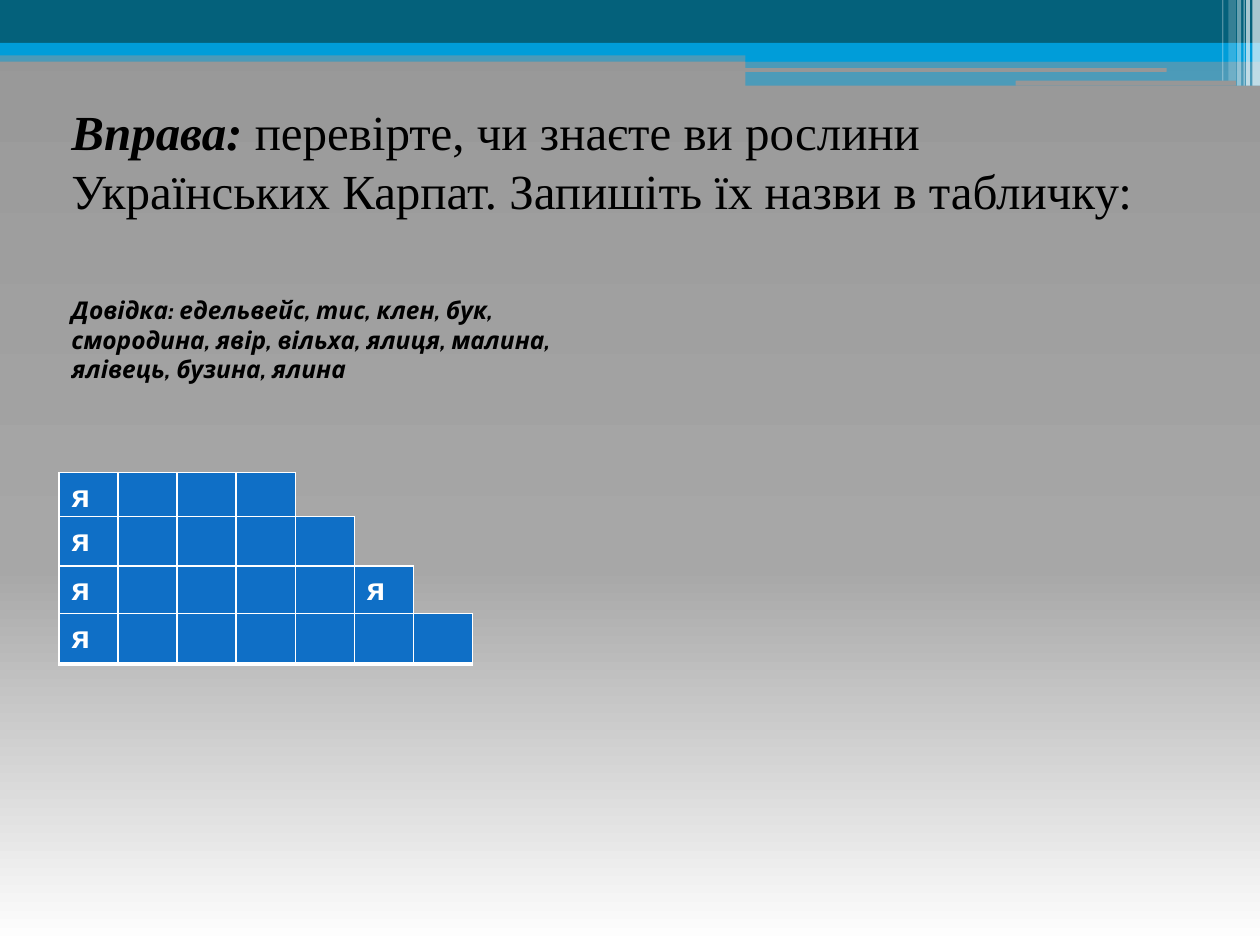
"""Build a slide with a plant-name exercise and a stepped letter grid."""
import pptx
import pptx.dml.color
import pptx.enum.shapes
import pptx.enum.text
import pptx.oxml
import pptx.oxml.ns
import pptx.util

Pt = pptx.util.Pt
qn = pptx.oxml.ns.qn
SHAPE = pptx.enum.shapes.MSO_SHAPE
NS = 'xmlns:a="http://schemas.openxmlformats.org/drawingml/2006/main"'

COLORS = {
    "teal": "04617B", "sky": "009DD9", "white": "FFFFFF", "black": "000000",
    "cell": "0F6FC6", "grey": "979797", "mid": "A7A7A7",
}
BACKDROP = [(0, "grey"), (60, "mid"), (100, "white")]

# left, top, width, height, color, opacity in percent
BARS = [
    (0, 28.8, 720, 6.5, "sky", 50),
    (0, 0, 720, 24.5, "teal", 100),
    (0, 24.5, 720, 7.2, "sky", 100),
    (426, 28, 294, 7.2, "sky", 100),
    (426, 34.6, 294, 14.4, "sky", 50),
]
SLOTS = [(425.5, 38.9, 241.2, 2.2), (580.3, 46.1, 126, 2.9)]
# left, width, height, opacity in percent
STRIPES = [
    (715.7, 4.3, 49, 65), (712.1, 2.2, 49, 65), (710.6, 0.7, 49, 60),
    (707, 2.2, 49, 40), (702, 4.3, 46.1, 20), (698.4, 0.7, 46.1, 30),
]

# text, size, font, bold italic; then line spacing and space before
PARAGRAPHS = [
    ([("Вправа: ", 28, "Times New Roman", True),
      ("перевірте, чи знаєте ви рослини Українських Карпат. "
       "Запишіть їх назви в табличку:", 28, "Times New Roman", False)], 33.5, 0),
    ([("Довідка: едельвейс, тис, клен, бук,\v"
       "смородина, явір, вільха, ялиця, малина,\v"
       "ялівець, бузина, ялина", 14, "Cabin", True)], 16.7, 43.7),
]

# top, height, letters
WORD_ROWS = [
    (270, 29.5, ["я", "", "", ""]),
    (295.2, 40.3, ["я", "", "", "", ""]),
    (323.3, 34.6, ["я", "", "", "", "", "я"]),
    (350.6, 28.4, ["я", "", "", "", "", "", ""]),
]
LEFT, CELL = 33.8, 33.75
BORDERS = {"lnL": 1, "lnR": 1, "lnT": 1, "lnB": 3}


def rgb(name):
    return pptx.dml.color.RGBColor.from_string(COLORS[name])


def paint_background(slide):
    slide.background.fill.solid()
    stops = "".join(
        f'<a:gs pos="{pos * 1000}"><a:srgbClr val="{COLORS[c]}"/></a:gs>'
        for pos, c in BACKDROP)
    grad = pptx.oxml.parse_xml(
        f'<a:gradFill {NS} rotWithShape="1"><a:gsLst>{stops}</a:gsLst>'
        '<a:lin ang="5400000" scaled="0"/></a:gradFill>')
    solid = next(slide.element.iter(qn("a:solidFill")))
    solid.getparent().replace(solid, grad)


def add_bar(slide, left, top, width, height, color, opacity=100, kind=SHAPE.RECTANGLE):
    sp = slide.shapes.add_shape(kind, Pt(left), Pt(top), Pt(width), Pt(height))
    sp.shadow.inherit = False
    sp.line.fill.background()
    sp.fill.solid()
    sp.fill.fore_color.rgb = rgb(color)
    if opacity < 100:
        clr = next(sp.element.spPr.iter(qn("a:srgbClr")))
        clr.append(pptx.oxml.parse_xml(f'<a:alpha {NS} val="{opacity * 1000}"/>'))


def style_run(r, size, font, color, bold, italic):
    r.font.size, r.font.name = Pt(size), font
    r.font.bold, r.font.italic = bold, italic
    r.font.color.rgb = rgb(color)


def add_task(slide):
    sp = slide.shapes.add_textbox(Pt(LEFT), Pt(56.2), Pt(648), Pt(163.4))
    tf = sp.text_frame
    tf.word_wrap = True
    tf.margin_top = Pt(2)
    for i, (runs, spacing, before) in enumerate(PARAGRAPHS):
        p = tf.add_paragraph() if i else tf.paragraphs[0]
        p.line_spacing, p.space_before = Pt(spacing), Pt(before)
        for text, size, font, strong in runs:
            start = len(p.runs)
            for j, line in enumerate(text.split("\v")):
                if j:
                    p.add_line_break()
                p.add_run().text = line
            for r in p.runs[start:]:
                style_run(r, size, font, "black", strong, strong)


def add_word_row(slide, top, height, letters):
    table = slide.shapes.add_table(
        1, len(letters), Pt(LEFT), Pt(top), Pt(CELL * len(letters)), Pt(height)).table
    table.first_row = table.horz_banding = False
    table.rows[0].height = Pt(height)
    for col, letter in enumerate(letters):
        table.columns[col].width = Pt(CELL)
        cell = table.cell(0, col)
        p = cell.text_frame.paragraphs[0]
        p.font.size = Pt(18)
        if letter:
            p.text = letter
            style_run(p.runs[0], 18, "Arial", "white", True, False)
        cell.fill.solid()
        cell.fill.fore_color.rgb = rgb("cell")
        tcPr = cell._tc.get_or_add_tcPr()
        for i, (tag, width) in enumerate(BORDERS.items()):
            tcPr.insert(i, pptx.oxml.parse_xml(
                f'<a:{tag} {NS} w="{Pt(width)}"><a:solidFill>'
                f'<a:srgbClr val="{COLORS["white"]}"/></a:solidFill></a:{tag}>'))


def main():
    prs = pptx.Presentation()
    prs.slide_width, prs.slide_height = Pt(720), Pt(540)
    slide = prs.slides.add_slide(prs.slide_layouts[6])
    paint_background(slide)
    for bar in BARS:
        add_bar(slide, *bar)
    for slot in SLOTS:
        add_bar(slide, *slot, "grey", kind=SHAPE.ROUNDED_RECTANGLE)
    for left, width, height, opacity in STRIPES:
        add_bar(slide, left, 0, width, height, "white", opacity)
    add_task(slide)
    for row in WORD_ROWS:
        add_word_row(slide, *row)
    prs.save("out.pptx")


if __name__ == "__main__":
    main()
